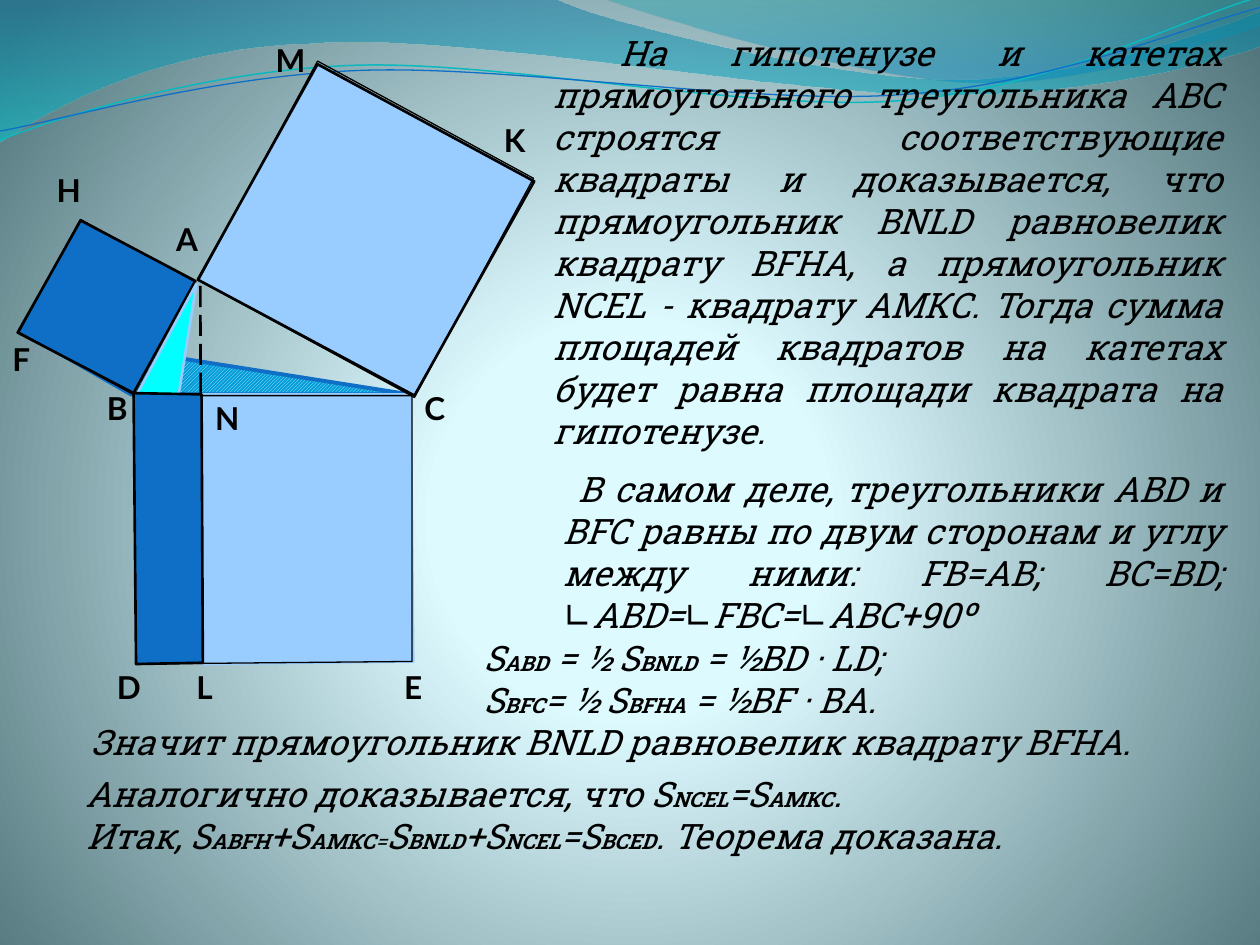
import math

import lxml.etree
import pptx
import pptx.dml.color
import pptx.enum.dml
import pptx.enum.shapes
import pptx.enum.text
import pptx.oxml.ns
import pptx.util

Inches = pptx.util.Inches
Pt = pptx.util.Pt
RGBColor = pptx.dml.color.RGBColor
qn = pptx.oxml.ns.qn

BLACK = RGBColor(0x00, 0x00, 0x00)
BLUE = RGBColor(0x0F, 0x6F, 0xC6)
SKY = RGBColor(0x99, 0xCC, 0xFF)
CYAN = RGBColor(0x00, 0xFF, 0xFF)
PALE = RGBColor(0xCC, 0xEC, 0xFF)
OCEAN = RGBColor(0x00, 0x9D, 0xD9)
TEAL = RGBColor(0x0A, 0xB8, 0xBF)
GLOW = RGBColor(0xDE, 0xFB, 0xFF)
GLOW_EDGE = RGBColor(0xDD, 0xFA, 0xFF)
SLATE = RGBColor(0x52, 0x76, 0x7C)
DEEP = RGBColor(0x00, 0x74, 0xA1)
AQUA = RGBColor(0x00, 0xC6, 0xCF)
SEA = RGBColor(0x00, 0xA1, 0xA9)
LAGOON = RGBColor(0x00, 0x8B, 0xBF)

FORMATS = {
    "body": {"name": "Roboto Slab", "size": Pt(20), "italic": True, "bold": False},
    "index": {"name": "Roboto Slab", "size": Pt(12), "italic": True, "bold": True},
    "sign": {"name": "Roboto Slab", "size": Pt(12), "italic": True, "bold": False},
    "label": {"name": "Lato", "size": Pt(18), "italic": False, "bold": True},
}

BIG_WAVE = [(0, 0), (4.4, -0.01), (4.76, 0.17, 6.64, 0.63, 7.58, 0.63),
            (8.53, 0.63, 9.58, 0.26, 10, 0.09), (10.01, 0.36),
            (9.83, 0.44, 8.7, 0.76, 7.46, 0.75), (6.22, 0.75, 3.82, 0.28, 2.57, 0.34),
            (1.29, 0.36, 0.46, 0.83, -0.01, 1.13)]
SMALL_WAVE = [(4.79, -0.01), (5.09, 0.11, 6.82, 0.62, 7.69, 0.65),
              (8.56, 0.69, 9.61, 0.32, 10, 0.21), (10, 0)]
TEAL_CURVE = [(0, 1.11), (0.48, 0.93, 1.58, 0.57, 2.77, 0.52),
              (3.95, 0.47, 5.93, 0.89, 7.13, 0.8), (8.33, 0.71, 9.38, 0.15, 9.98, -0.02)]
BLUE_CURVE = [(0, 1.04), (0.47, 0.96, 1.64, 0.61, 2.83, 0.56),
              (4.03, 0.51, 5.97, 0.84, 7.17, 0.75), (8.36, 0.67, 9.41, 0.21, 10, 0.06)]
CURVE_CENTER = (4.99, 0.58)
CURVE_TILT = -2.7

LABELS = [("D", 0.83, 5.25, 0.39), ("L", 1.46, 5.25, 0.34), ("E", 3.11, 5.25, 0.36),
          ("C", 3.27, 3.04, 0.37), ("N", 1.61, 3.12, 0.39), ("В", 0.75, 3.04, 0.37),
          ("А", 1.3, 1.7, 0.37), ("F", 0, 2.65, 0.35), ("H", 0.35, 1.31, 0.39),
          ("M", 2.09, 0.28, 0.43), ("K", 3.9, 0.91, 0.38)]

INTRO = ("На гипотенузе и катетах прямоугольного треугольника АВС строятся "
         "соответствующие квадраты и доказывается, что прямоугольник BNLD равновелик "
         "квадрату BFHА, а прямоугольник NCEL - квадрату АMКС. Тогда сумма площадей "
         "квадратов на катетах будет равна площади квадрата на гипотенузе.")
TRIANGLES = ("В самом деле, треугольники ABD и BFC равны по двум сторонам и углу "
             "между ними: FB=AB; BC=BD; ∟АВD=∟FBC=∟ABC+90º")
AREAS = [("S|ABD| = ½ S|BNLD| = ½BD · LD;", 3.12, 0),
         ("S|BFC|= ½ S|BFHA| = ½BF · BA.", 3.12, 0),
         ("Значит прямоугольник BNLD равновелик квадрату BFHА.", 0, 0)]
RESULT = [("Аналогично доказывается, что S|NCEL|=S|AMКС|.", 0.27, 0),
          ("Итак, S|ABFH|+S|AMКС|=||S|BNLD|+S|NCEL|=S|BCED|. Теорема доказана.", 0.28, 0)]


def pairs(segment):
    return list(zip(segment[::2], segment[1::2]))


def turn(path, center, degrees):
    cosine, sine = math.cos(math.radians(degrees)), math.sin(math.radians(degrees))
    turned = []
    for segment in path:
        offsets = [(x - center[0], y - center[1]) for x, y in pairs(segment)]
        turned.append([value for x, y in offsets for value in
                       (center[0] + x * cosine - y * sine, center[1] + x * sine + y * cosine)])
    return turned


def gradient(stops, focus=None):
    fill = lxml.etree.Element(qn("a:gradFill"), rotWithShape="1")
    stop_list = lxml.etree.SubElement(fill, qn("a:gsLst"))
    for position, color, opacity in stops:
        stop = lxml.etree.SubElement(stop_list, qn("a:gs"), pos=str(position * 1000))
        tint = lxml.etree.SubElement(stop, qn("a:srgbClr"), val=str(color))
        if opacity < 100:
            lxml.etree.SubElement(tint, qn("a:alpha"), val=str(opacity * 1000))
    if focus:
        path = lxml.etree.SubElement(fill, qn("a:path"), path="circle")
        sides = {side: str(value * 1000) for side, value in zip("ltrb", focus)}
        lxml.etree.SubElement(path, qn("a:fillToRect"), **sides)
    else:
        lxml.etree.SubElement(fill, qn("a:lin"), ang="5400000", scaled="1")
    return fill


class SlideBuilder:
    def __init__(self, slide, formats):
        self.slide = slide
        self.shapes = slide.shapes
        self.formats = formats

    def background(self, stops, focus):
        self.slide.background.fill.solid()
        properties = self.slide._element.find(".//" + qn("p:bgPr"))
        properties.replace(properties.find(qn("a:solidFill")), gradient(stops, focus))

    def paint(self, shape, fill, line, width):
        shape.shadow.inherit = False
        if fill is None:
            shape.fill.background()
        else:
            shape.fill.solid()
            shape.fill.fore_color.rgb = fill
        if line is None:
            shape.line.fill.background()
        else:
            shape.line.color.rgb = line
            shape.line.width = Pt(width)

    def outline(self, path, fill=None, line=None, width=1.5, close=True):
        ends = [(Inches(x), Inches(y)) for x, y in (segment[-2:] for segment in path)]
        builder = self.shapes.build_freeform(*ends[0])
        builder.add_line_segments(ends[1:], close=close)
        shape = builder.convert_to_shape()
        self.paint(shape, fill, line, width)
        straight = shape._element.findall(".//" + qn("a:lnTo"))
        for segment, element in zip(path[1:], straight):
            if len(segment) == 6:
                curve = lxml.etree.Element(qn("a:cubicBezTo"))
                for x, y in pairs(segment):
                    lxml.etree.SubElement(curve, qn("a:pt"), x=str(Inches(x) - shape.left),
                                          y=str(Inches(y) - shape.top))
                element.getparent().replace(element, curve)
        return shape

    def wave(self, path, stops):
        properties = self.outline(path)._element.spPr
        properties.replace(properties.find(qn("a:noFill")), gradient(stops))

    def tilted_curve(self, path, line, width):
        level = turn(path, CURVE_CENTER, -CURVE_TILT)
        self.outline(level, None, line, width, close=False).rotation = CURVE_TILT

    def hatched(self, path, front, back, line, width):
        fill = self.outline(path, None, line, width).fill
        fill.patterned()
        fill.pattern = pptx.enum.dml.MSO_PATTERN.LIGHT_UPWARD_DIAGONAL
        fill.fore_color.rgb = front
        fill.back_color.rgb = back

    def frame(self, left, top, width, height, rotation):
        shape = self.shapes.add_shape(
            pptx.enum.shapes.MSO_SHAPE.RECTANGLE,
            Inches(left), Inches(top), Inches(width), Inches(height))
        shape.rotation = rotation
        self.paint(shape, None, BLACK, 0.75)

    def dashed(self, x1, y1, x2, y2):
        connector = self.shapes.add_connector(
            pptx.enum.shapes.MSO_CONNECTOR.STRAIGHT,
            Inches(x1), Inches(y1), Inches(x2), Inches(y2))
        connector.line.color.rgb = BLACK
        connector.line.width = Pt(1.5)
        connector.line.dash_style = pptx.enum.dml.MSO_LINE.LONG_DASH
        lxml.etree.SubElement(connector._element.spPr, qn("a:effectLst"))

    def text(self, left, top, width, height, lines, style="body", wrap=True, inset=0.05):
        box = self.shapes.add_textbox(
            Inches(left), Inches(top), Inches(width), Inches(height))
        frame = box.text_frame
        frame.word_wrap = wrap
        frame.margin_top = Inches(inset)
        frame.auto_size = pptx.enum.text.MSO_AUTO_SIZE.SHAPE_TO_FIT_TEXT
        for number, (line, margin, indent) in enumerate(lines):
            paragraph = frame.add_paragraph() if number else frame.paragraphs[0]
            paragraph.alignment = pptx.enum.text.PP_ALIGN.JUSTIFY
            properties = paragraph._p.get_or_add_pPr()
            properties.set("marL", str(Inches(margin)))
            properties.set("indent", str(Inches(indent)))
            for position, part in enumerate(line.split("|")):
                if part:
                    kind = "sign" if part == "=" else (style, "index")[position % 2]
                    self.run(paragraph, part, kind)

    def run(self, paragraph, text, kind):
        run = paragraph.add_run()
        run.text = text
        run.font.color.rgb = BLACK
        for name, value in self.formats[kind].items():
            setattr(run.font, name, value)


def main():
    presentation = pptx.Presentation()
    presentation.slide_width, presentation.slide_height = Inches(10), Inches(7.5)
    slide = presentation.slides.add_slide(presentation.slide_layouts[6])
    page = SlideBuilder(slide, FORMATS)

    page.background([(0, GLOW, 100), (25, GLOW_EDGE, 100), (100, SLATE, 100)],
                    (10, 110, 10, 100))
    page.wave(BIG_WAVE, [(0, DEEP, 45), (100, AQUA, 55)])
    page.wave(SMALL_WAVE, [(0, SEA, 30), (80, LAGOON, 45)])
    page.tilted_curve(TEAL_CURVE, TEAL, 0.85)
    page.tilted_curve(BLUE_CURVE, BLUE, 0.75)

    page.text(4.29, 0.13, 5.51, 3.53, [(INTRO, 0, 0.53)], inset=0.12)
    page.text(0.62, 5, 9.14, 1.11, AREAS)
    page.text(4.37, 3.59, 5.43, 1.51, [(TRIANGLES, 0, 0.12)], inset=0.12)
    page.hatched([(1.04, 3.13), (3.25, 3.13), (0.2, 2.65)], PALE, OCEAN, BLUE, 2.25)
    page.outline([(0.14, 2.64), (0.64, 1.75), (1.55, 2.23), (1.06, 3.12)], BLUE, BLACK)
    page.outline([(1.6, 3.13), (3.26, 3.13), (3.28, 5.25), (1.61, 5.27)], SKY, SKY)
    page.text(0.31, 6.02, 9.37, 0.84, RESULT, inset=0.11)
    page.outline([(1.57, 2.22), (2.52, 0.51), (4.24, 1.44), (3.29, 3.14)], SKY, BLACK)

    page.frame(0.33, 1.93, 1.05, 1.02, 28.6)
    page.frame(1.93, 0.83, 1.95, 1.98, 28.5)
    page.dashed(1.59, 2.27, 1.6, 5.25)
    for letter, left, top, width in LABELS:
        page.text(left, top, width, 0.4, [(letter, 0, 0)], "label", wrap=False)
    page.outline([(1.08, 5.27), (1.06, 3.14), (3.27, 3.14), (3.27, 5.25)], None, BLACK, 0.75)
    page.outline([(1.08, 5.25), (1.06, 3.18), (1.56, 2.25)], CYAN, SKY)
    page.outline([(1.06, 3.12), (1.6, 3.13), (1.61, 5.26), (1.08, 5.27)], BLUE, BLACK)

    presentation.save("out.pptx")


if __name__ == "__main__":
    main()
